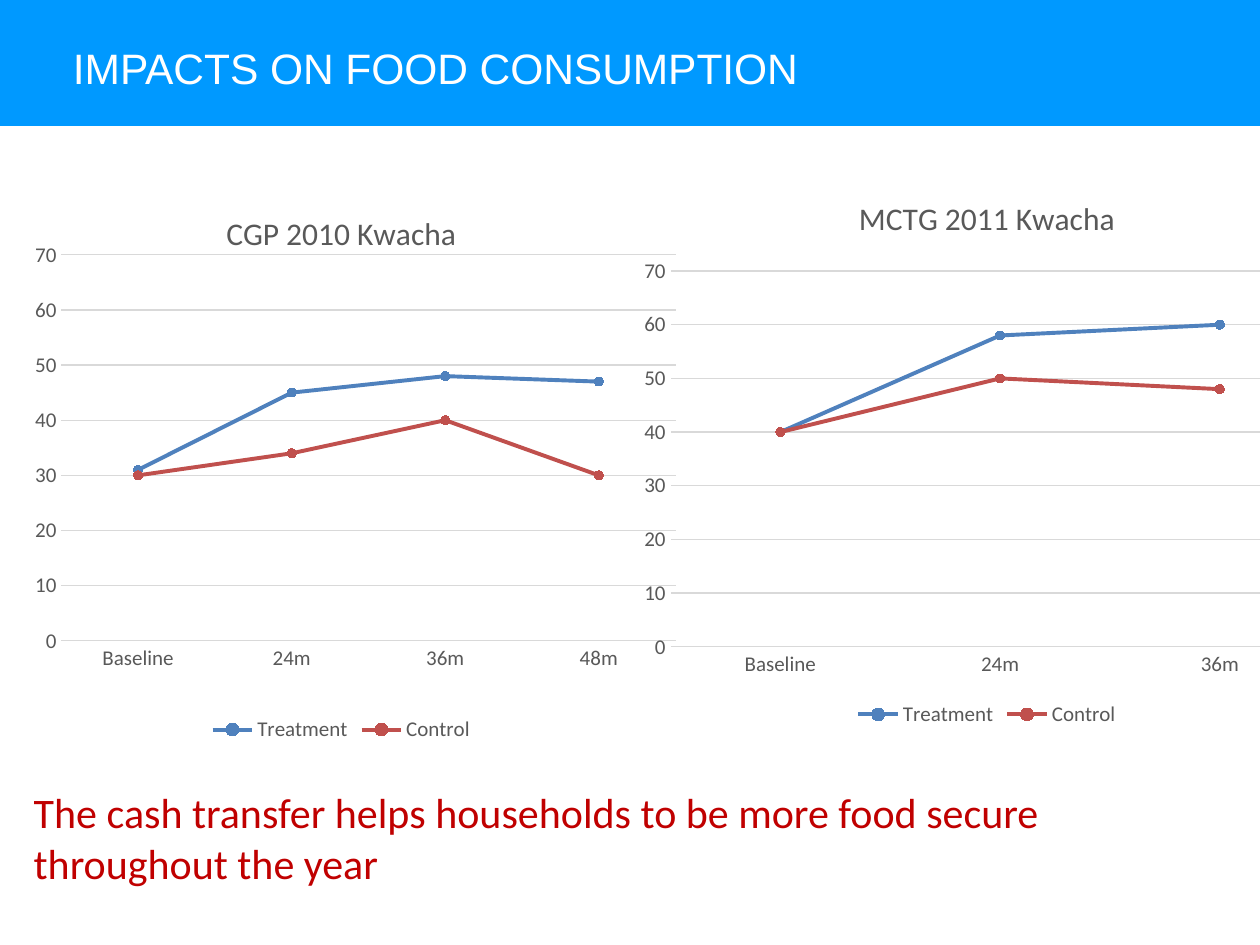
from lxml.etree import SubElement
from pptx import Presentation
from pptx.chart.data import CategoryChartData
from pptx.dml.color import RGBColor
from pptx.enum.chart import XL_CHART_TYPE, XL_LEGEND_POSITION, XL_MARKER_STYLE, XL_TICK_MARK
from pptx.enum.shapes import MSO_SHAPE
from pptx.enum.text import MSO_ANCHOR, PP_ALIGN
from pptx.oxml.ns import qn
from pptx.util import Pt

COLORS = {
    "band": "0099FF", "white": "FFFFFF", "message": "C00000",
    "label": "595959", "grid": "D9D9D9",
    "Treatment": "4F81BD", "Control": "C0504D",
}


def color(name):
    return RGBColor.from_string(COLORS[name])


def style_font(font, size, fill, name="Calibri", bold=False):
    font.name, font.size, font.bold = name, Pt(size), bold
    font.color.rgb = color(fill)


def write_text(text_frame, text, align=PP_ALIGN.LEFT, **font_format):
    text_frame.text = text
    text_frame.word_wrap = True
    text_frame.vertical_anchor = MSO_ANCHOR.MIDDLE
    paragraph = text_frame.paragraphs[0]
    paragraph.alignment = align
    style_font(paragraph.runs[0].font, **font_format)


class SlideBuilder:
    def __init__(self, slide):
        self.slide = slide

    def band(self, left, top, width, height):
        shape = self.slide.shapes.add_shape(
            MSO_SHAPE.RECTANGLE, Pt(left), Pt(top), Pt(width), Pt(height))
        shape.shadow.inherit = False
        shape.fill.solid()
        shape.fill.fore_color.rgb = color("band")
        shape.line.fill.background()
        # The band lies behind the title placeholder
        self.slide.shapes._spTree.insert(2, shape._element)

    def title(self, text, left, top, width, height):
        title = self.slide.shapes.title
        title.left, title.top = Pt(left), Pt(top)
        title.width, title.height = Pt(width), Pt(height)
        write_text(title.text_frame, text, size=24.3, fill="white", name="Arial")

    def message(self, text, left, top, width, height):
        box = self.slide.shapes.add_textbox(Pt(left), Pt(top), Pt(width), Pt(height))
        write_text(box.text_frame, text, size=24, fill="message")

    def line_chart(self, title, categories, series, left, top, width, height, plot=None):
        data = CategoryChartData()
        data.categories = categories
        for name, values in series.items():
            data.add_series(name, values)
        chart = self.slide.shapes.add_chart(
            XL_CHART_TYPE.LINE_MARKERS, Pt(left), Pt(top), Pt(width), Pt(height), data).chart
        style_font(chart.font, 12, "label")

        # Title and legend
        chart.has_title = True
        write_text(chart.chart_title.text_frame, title, PP_ALIGN.CENTER, size=18, fill="label")
        chart.chart_title.include_in_layout = False
        chart.has_legend = True
        chart.legend.position = XL_LEGEND_POSITION.BOTTOM
        chart.legend.include_in_layout = False
        style_font(chart.legend.font, 12, "label")

        # Axes
        for axis in (chart.category_axis, chart.value_axis):
            axis.major_tick_mark = axis.minor_tick_mark = XL_TICK_MARK.NONE
            style_font(axis.tick_labels.font, 12, "label")
        value_axis = chart.value_axis
        value_axis.minimum_scale, value_axis.maximum_scale = 0, 70
        value_axis.major_unit = 10
        value_axis.format.line.fill.background()
        for line in (chart.category_axis.format.line, value_axis.major_gridlines.format.line):
            line.color.rgb = color("grid")
            line.width = Pt(0.75)

        # Series
        chart.plots[0].vary_by_categories = False
        for line_series in chart.plots[0].series:
            fill = color(line_series.name)
            line_series.smooth = False
            line_series.format.line.color.rgb = fill
            line_series.format.line.width = Pt(2.25)
            marker = line_series.marker
            marker.style, marker.size = XL_MARKER_STYLE.CIRCLE, 5
            marker.format.fill.solid()
            marker.format.fill.fore_color.rgb = fill
            marker.format.line.color.rgb = fill
        if plot:
            self.place_plot(chart, plot)

    def place_plot(self, chart, plot):
        plot_area = chart._chartSpace.chart.plotArea
        layout = plot_area.find(qn("c:layout"))
        if layout is None:
            layout = SubElement(plot_area, qn("c:layout"))
            plot_area.insert(0, layout)
        manual = SubElement(layout, qn("c:manualLayout"))
        settings = [("layoutTarget", "inner"), ("xMode", "edge"), ("yMode", "edge")]
        settings += zip("xywh", plot)
        for tag, value in settings:
            SubElement(manual, qn(f"c:{tag}")).set("val", str(value))


def main():
    presentation = Presentation()
    presentation.slide_width, presentation.slide_height = Pt(720), Pt(540)
    builder = SlideBuilder(presentation.slides.add_slide(presentation.slide_layouts[5]))

    # Heading
    builder.band(0, 0, 720, 72)
    builder.title("IMPACTS ON FOOD CONSUMPTION", 34.5, 19, 542, 39.5)

    # Charts
    periods = ["Baseline", "24m", "36m", "48m"]
    builder.line_chart(
        "CGP 2010 Kwacha", periods,
        {"Treatment": [31, 45, 48, 47], "Control": [30, 34, 40, 30]},
        0, 107.3, 390, 319.7, plot=(0.09, 0.12, 0.9, 0.69))
    builder.line_chart(
        "MCTG 2011 Kwacha", periods[:3],
        {"Treatment": [40, 58, 60], "Control": [40, 50, 48]},
        360, 98.6, 408, 319.7)

    # Message
    builder.message(
        "The cash transfer helps households to be more food secure throughout the year",
        12.2, 454.3, 606, 48.2)

    presentation.save("out.pptx")


if __name__ == "__main__":
    main()
